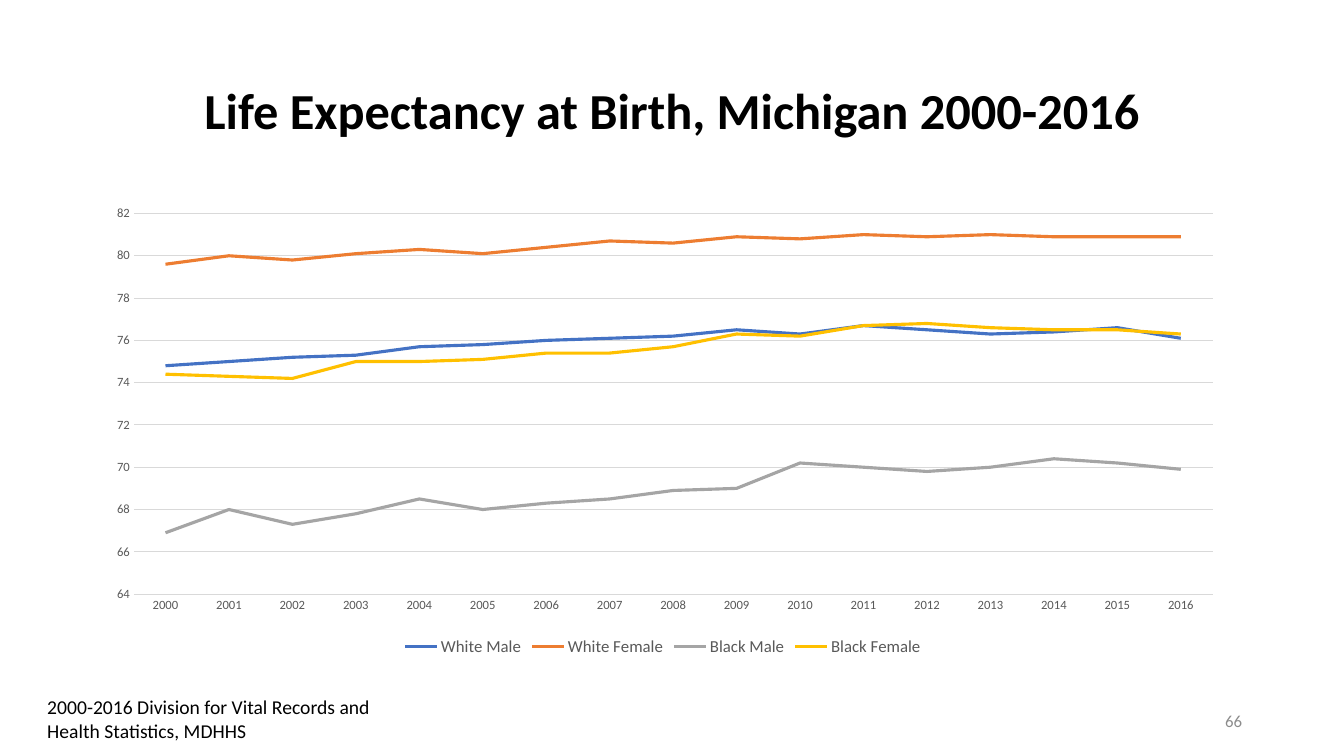
from dataclasses import dataclass

import pptx
import pptx.chart.data
import pptx.dml.color
import pptx.enum.chart
import pptx.enum.text
import pptx.oxml
import pptx.oxml.ns
import pptx.util
from pptx.enum.text import MSO_ANCHOR, PP_ALIGN

Pt = pptx.util.Pt
SLIDE_W, SLIDE_H = pptx.util.Inches(13.33), pptx.util.Inches(7.5)
FONT = "Calibri"
COLORS = {
    "text": "000000", "axis": "595959", "grid": "D9D9D9", "number": "8C8C8C",
    "White Male": "4472C4", "White Female": "ED7D31",
    "Black Male": "A5A5A5", "Black Female": "FFC000",
}
YEARS = [str(year) for year in range(2000, 2017)]
PLOT_AREA = {"x": 0.036, "y": 0.026, "w": 0.946, "h": 0.83}


@dataclass(frozen=True)
class Box:
    """Place on the slide, in percent of its width and height."""
    left: float
    top: float
    width: float
    height: float

    def emu(self) -> tuple[int, ...]:
        shares = (self.left, self.top, self.width, self.height)
        sides = (SLIDE_W, SLIDE_H) * 2
        return tuple(round(side * share / 100) for side, share in zip(sides, shares))


@dataclass(frozen=True)
class Label:
    text: str
    box: Box
    size: float
    color: str = "text"
    bold: bool = False
    align: PP_ALIGN = PP_ALIGN.LEFT
    anchor: MSO_ANCHOR = MSO_ANCHOR.MIDDLE
    line_spacing: float = 1.0


@dataclass(frozen=True)
class Series:
    name: str
    values: tuple[float, ...]


TITLE = Label("Life Expectancy at Birth, Michigan 2000-2016", Box(6.9, 5.33, 86.27, 19.33),
              36, bold=True, align=PP_ALIGN.CENTER, line_spacing=0.9)
LABELS = [
    Label("66", Box(70.67, 92.67, 22.5, 5.33), 12, "number", align=PP_ALIGN.RIGHT),
    Label("2000-2016 Division for Vital Records and Health Statistics, MDHHS",
          Box(2.78, 91.33, 26.63, 7.6), 14, anchor=MSO_ANCHOR.TOP),
]
CHART_BOX = Box(6.9, 26.67, 84.85, 60.67)
SERIES = [
    Series("White Male", (74.8, 75, 75.2, 75.3, 75.7, 75.8, 76, 76.1, 76.2,
                          76.5, 76.3, 76.7, 76.5, 76.3, 76.4, 76.6, 76.1)),
    Series("White Female", (79.6, 80, 79.8, 80.1, 80.3, 80.1, 80.4, 80.7, 80.6,
                            80.9, 80.8, 81, 80.9, 81, 80.9, 80.9, 80.9)),
    Series("Black Male", (66.9, 68, 67.3, 67.8, 68.5, 68, 68.3, 68.5, 68.9,
                          69, 70.2, 70, 69.8, 70, 70.4, 70.2, 69.9)),
    Series("Black Female", (74.4, 74.3, 74.2, 75, 75, 75.1, 75.4, 75.4, 75.7,
                            76.3, 76.2, 76.7, 76.8, 76.6, 76.5, 76.5, 76.3)),
]


def set_all(target, values: dict) -> None:
    for name, value in values.items():
        setattr(target, name, value)


def rgb(color: str) -> pptx.dml.color.RGBColor:
    return pptx.dml.color.RGBColor.from_string(COLORS[color])


def style_font(font, size: float, color: str, bold: bool = False) -> None:
    set_all(font, {"name": FONT, "size": Pt(size), "bold": bold})
    font.color.rgb = rgb(color)


def style_line(line, color: str, width: float) -> None:
    line.color.rgb = rgb(color)
    line.width = Pt(width)


def write_label(sp, label: Label) -> None:
    left, top, width, height = label.box.emu()
    set_all(sp, {"left": left, "top": top, "width": width, "height": height})
    tf = sp.text_frame
    set_all(tf, {"word_wrap": True, "vertical_anchor": label.anchor,
                 "auto_size": pptx.enum.text.MSO_AUTO_SIZE.NONE})
    p = tf.paragraphs[0]
    set_all(p, {"alignment": label.align, "line_spacing": label.line_spacing})
    r = p.add_run()
    r.text = label.text
    style_font(r.font, label.size, label.color, label.bold)


def place_plot_area(chart) -> None:
    """Fix the inner plot area at set shares of the chart."""
    plot_area = chart.element.find(".//" + pptx.oxml.ns.qn("c:plotArea"))
    for layout in plot_area.findall(pptx.oxml.ns.qn("c:layout")):
        plot_area.remove(layout)
    modes = "".join(f'<c:{side}Mode val="edge"/>' for side in "xy")
    sizes = "".join(f'<c:{side} val="{share}"/>' for side, share in PLOT_AREA.items())
    plot_area.insert(0, pptx.oxml.parse_xml(
        f'<c:layout {pptx.oxml.ns.nsdecls("c")}><c:manualLayout>'
        f'<c:layoutTarget val="inner"/>{modes}{sizes}</c:manualLayout></c:layout>'))


def add_life_chart(slide) -> None:
    data = pptx.chart.data.CategoryChartData()
    data.categories = YEARS
    for series in SERIES:
        data.add_series(series.name, series.values)
    chart = slide.shapes.add_chart(
        pptx.enum.chart.XL_CHART_TYPE.LINE, *CHART_BOX.emu(), data).chart
    set_all(chart, {"has_title": False, "has_legend": True})
    style_font(chart.font, 10, "text")
    place_plot_area(chart)

    set_all(chart.legend, {"position": pptx.enum.chart.XL_LEGEND_POSITION.BOTTOM,
                           "include_in_layout": False})
    style_font(chart.legend.font, 12, "axis")

    years, ages = chart.category_axis, chart.value_axis
    for axis in (years, ages):
        set_all(axis, {"major_tick_mark": pptx.enum.chart.XL_TICK_MARK.NONE,
                       "minor_tick_mark": pptx.enum.chart.XL_TICK_MARK.NONE})
        style_font(axis.tick_labels.font, 9, "axis")
    style_line(years.format.line, "grid", 0.75)
    set_all(ages, {"minimum_scale": 64, "maximum_scale": 82, "major_unit": 2,
                   "has_major_gridlines": True})
    style_line(ages.major_gridlines.format.line, "grid", 0.75)
    ages.format.line.fill.background()

    plot = chart.plots[0]
    plot.vary_by_categories = False
    for line in plot.series:
        line.smooth = False
        line.marker.style = pptx.enum.chart.XL_MARKER_STYLE.NONE
        style_line(line.format.line, line.name, 2.25)


def main() -> None:
    prs = pptx.Presentation()
    set_all(prs, {"slide_width": SLIDE_W, "slide_height": SLIDE_H})
    slide = prs.slides.add_slide(prs.slide_layouts.get_by_name("Title Only"))
    write_label(slide.shapes.title, TITLE)
    add_life_chart(slide)
    for label in LABELS:
        write_label(slide.shapes.add_textbox(*label.box.emu()), label)
    prs.save("out.pptx")


if __name__ == "__main__":
    main()
